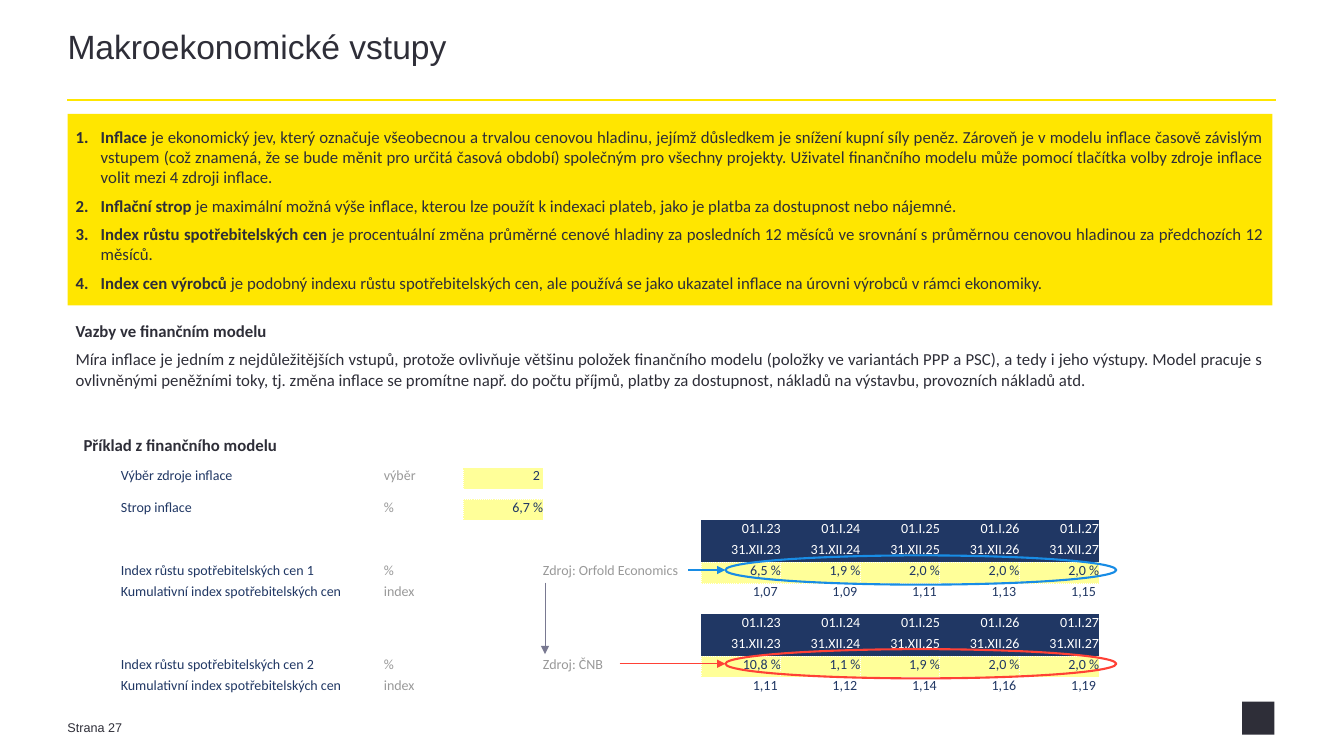
from lxml import etree
from pptx import Presentation
from pptx.dml.color import RGBColor
from pptx.enum.shapes import MSO_CONNECTOR, MSO_SHAPE
from pptx.enum.text import MSO_ANCHOR, MSO_AUTO_SIZE, PP_ALIGN
from pptx.oxml.ns import qn
from pptx.util import Inches, Pt

LEFT, RIGHT, JUST = PP_ALIGN.LEFT, PP_ALIGN.RIGHT, PP_ALIGN.JUSTIFY
TOP, MIDDLE = MSO_ANCHOR.TOP, MSO_ANCHOR.MIDDLE
FIXED = MSO_AUTO_SIZE.NONE
RECT, OVAL = MSO_SHAPE.RECTANGLE, MSO_SHAPE.OVAL
LINE = MSO_CONNECTOR.STRAIGHT
PLAIN = "{2D5ABB26-0587-4C30-8999-92F81FD0307C}"

# Content
COLORS = {"ink": "2E2E38", "brand": "FFE600", "navy": "203764", "gray": "999999",
          "input": "FFFF99", "white": "FFFFFF", "blue": "188CE5", "red": "FF4136",
          "slate": "797991"}
TITLE = "Makroekonomické vstupy"
PAGE = "Strana 27"
TERMS = [
    ("Inflace", " je ekonomický jev, který označuje všeobecnou a trvalou cenovou hladinu, "
     "jejímž důsledkem je snížení kupní síly peněz. Zároveň je v modelu inflace časově "
     "závislým vstupem (což znamená, že se bude měnit pro určitá časová období) společným "
     "pro všechny projekty. Uživatel finančního modelu může pomocí tlačítka volby zdroje "
     "inflace volit mezi 4 zdroji inflace."),
    ("Inflační strop ", "je maximální možná výše inflace, kterou lze použít k indexaci "
     "plateb, jako je platba za dostupnost nebo nájemné."),
    ("Index růstu spotřebitelských cen ", "je procentuální změna průměrné cenové hladiny za "
     "posledních 12 měsíců ve srovnání s průměrnou cenovou hladinou za předchozích 12 měsíců."),
    ("Index cen výrobců ", "je podobný indexu růstu spotřebitelských cen, ale používá se "
     "jako ukazatel inflace na úrovni výrobců v rámci ekonomiky."),
]
LINKS = [
    ("Vazby ve finančním modelu", ""),
    ("", "Míra inflace je jedním z nejdůležitějších vstupů, protože ovlivňuje většinu položek "
     "finančního modelu (položky ve variantách PPP a PSC), a tedy i jeho výstupy. Model "
     "pracuje s ovlivněnými peněžními toky, tj. změna inflace se promítne např. do počtu "
     "příjmů, platby za dostupnost, nákladů na výstavbu, provozních nákladů atd."),
]
SAMPLE = [("Příklad z finančního modelu", "")]
YEARS = range(23, 28)
STARTS = [f"01.I.{year}" for year in YEARS]
ENDS = [f"31.XII.{year}" for year in YEARS]
INDEX = "Index růstu spotřebitelských cen"
TOTAL = "Kumulativní index spotřebitelských cen"

# Rows: height, kind, label, unit, input, source, yearly values
ROWS = [
    (0.21, "pick", "Výběr zdroje inflace", "výběr", "2 ", "", []),
    (0.1, "gap", "", "", "", "", []),
    (0.21, "pick", "Strop inflace", "%", "6,7 %", "", []),
    (0.21, "head", "", "", "", "", STARTS),
    (0.21, "head", "", "", "", "", ENDS),
    (0.21, "rate", INDEX + " 1", "%", "", "Zdroj: Orfold Economics",
     ["6,5 %", "1,9 %", "2,0 %", "2,0 %", "2,0 %"]),
    (0.21, "sum", TOTAL, "index", "", "", ["1,07 ", "1,09 ", "1,11 ", "1,13 ", "1,15 "]),
    (0.09, "gap", "", "", "", "", []),
    (0.21, "head", "", "", "", "", STARTS),
    (0.21, "head", "", "", "", "", ENDS),
    (0.21, "rate", INDEX + " 2", "%", "", "Zdroj: ČNB",
     ["10,8 %", "1,1 %", "1,9 %", "2,0 %", "2,0 %"]),
    (0.19, "sum", TOTAL, "index", "", "", ["1,11 ", "1,12 ", "1,14 ", "1,16 ", "1,19 "]),
]
WIDTHS = [2.61, 0.79, 0.79, 1.57] + [0.79] * 5
RINGS = [(5.51, "blue", 6.83), (6.44, "red", 6.15)]  # top, colour, arrow start
RING_X, RING_W, RING_H = 7.2, 3.88, 0.29


def color(name):
    return RGBColor.from_string(COLORS[name])


def place(shape, left, top, width, height):
    shape.left, shape.top = Inches(left), Inches(top)
    shape.width, shape.height = Inches(width), Inches(height)


def style(para, size, tone, face="Calibri"):
    for run in para.runs:
        run.font.size, run.font.name = Pt(size), face
        run.font.color.rgb = color(tone)


def frame(shape, pad_x, pad_y, anchor=TOP):
    box = shape.text_frame
    box.word_wrap, box.auto_size, box.vertical_anchor = True, FIXED, anchor
    box.margin_left = box.margin_right = Inches(pad_x)
    box.margin_top = box.margin_bottom = Inches(pad_y)
    return box


def write(box, items, number=False):
    for i, (lead, rest) in enumerate(items):
        para = box.paragraphs[0] if i == 0 else box.add_paragraph()
        if number:
            props = para._p.get_or_add_pPr()
            props.set("marL", str(Inches(0.25)))
            props.set("indent", str(Inches(-0.25)))
            etree.SubElement(props, qn("a:buAutoNum"), type="arabicPeriod")
        para.alignment = JUST
        para.space_before, para.space_after = Pt(0), Pt(6)
        for text, bold in ((lead, True), (rest, False)):
            if text:
                run = para.add_run()
                run.text, run.font.bold = text, bold
        style(para, 12, "ink")


def label(shape, text, size):
    para = shape.text_frame.paragraphs[0]
    para.text, para.alignment, para.line_spacing = text, LEFT, 0.85
    style(para, size, "ink", "Arial")


def draw(x1, y1, x2, y2, tone, width, arrow=True):
    line = slide.shapes.add_connector(LINE, Inches(x1), Inches(y1), Inches(x2), Inches(y2))
    line.line.color.rgb, line.line.width = color(tone), Pt(width)
    if arrow:
        etree.SubElement(line.line._get_or_add_ln(), qn("a:tailEnd"), type="triangle")
    etree.SubElement(line._element.spPr, qn("a:effectLst"))


def dot(cell):
    props = cell._tc.get_or_add_tcPr()
    for side in ("lnL", "lnR", "lnT", "lnB"):
        edge = etree.SubElement(props, qn("a:" + side), w=str(Pt(0.5)))
        fill = etree.SubElement(edge, qn("a:solidFill"))
        etree.SubElement(fill, qn("a:srgbClr"), val=COLORS["white"])
        etree.SubElement(edge, qn("a:prstDash"), val="sysDot")


def fill_cell(cell, text, col, kind):
    cell.margin_left = cell.margin_right = cell.margin_top = cell.margin_bottom = 0
    back = None
    if text and (col == 2 or col > 3):
        back = {"pick": "input", "rate": "input", "head": "navy"}.get(kind)
    if back == "input":
        dot(cell)
    if back:
        cell.fill.solid()
        cell.fill.fore_color.rgb = color(back)
    else:
        cell.fill.background()
    para = cell.text_frame.paragraphs[0]
    if not text:
        etree.SubElement(para._p, qn("a:endParaRPr"), sz="100")
        return
    para.text = text
    para.alignment = RIGHT if col == 2 or col > 3 else LEFT
    style(para, 10, "white" if back == "navy" else "gray" if col in (1, 3) else "navy")


prs = Presentation()
prs.slide_width, prs.slide_height = Inches(13.34), Inches(7.5)
slide = prs.slides.add_slide(prs.slide_layouts[1])

# Title, rule, footer and corner mark
title = slide.shapes.title
place(title, 0.67, 0.32, 12.01, 0.65)
frame(title, 0, 0)
label(title, TITLE, 24)
draw(0.67, 0.99, 12.67, 0.99, "brand", 1.5, arrow=False)
page = slide.shapes.add_textbox(Inches(0.67), Inches(7.12), Inches(1), Inches(0.17))
frame(page, 0, 0.04).margin_bottom = 0
label(page, PAGE, 9)
mark = slide.shapes.add_shape(RECT, Inches(12.33), Inches(6.96), Inches(0.32), Inches(0.33))
mark.shadow.inherit = False
mark.fill.solid()
mark.fill.fore_color.rgb = color("ink")
mark.line.fill.background()

# Definitions
body = slide.placeholders[1]
place(body, 0.67, 1.13, 11.96, 1.9)
body.fill.solid()
body.fill.fore_color.rgb = color("brand")
write(frame(body, 0.08, 0.12, MIDDLE), TERMS, number=True)

# Text below the definitions
for items, left, top, height, pad in ((LINKS, 0.67, 3.06, 1.13, 0.08),
                                      (SAMPLE, 0.71, 4.19, 0.44, 0.12)):
    note = slide.shapes.add_textbox(Inches(left), Inches(top), Inches(11.96), Inches(height))
    write(frame(note, pad, 0.12), items)

# Model table
grid = slide.shapes.add_table(len(ROWS), len(WIDTHS), Inches(1.2), Inches(4.64),
                              Inches(sum(WIDTHS)), Inches(sum(row[0] for row in ROWS))).table
grid.first_row = grid.horz_banding = False
grid._tbl.tblPr.find(qn("a:tableStyleId")).text = PLAIN
for col, width in enumerate(WIDTHS):
    grid.columns[col].width = Inches(width)
for r, (height, kind, *texts, values) in enumerate(ROWS):
    grid.rows[r].height = Inches(height)
    for col, text in enumerate(texts + (values or [""] * len(YEARS))):
        fill_cell(grid.cell(r, col), text, col, kind)

# Rings and arrows
for top, tone, start in RINGS:
    ring = slide.shapes.add_shape(OVAL, Inches(RING_X), Inches(top),
                                  Inches(RING_W), Inches(RING_H))
    ring.shadow.inherit = False
    ring.fill.background()
    ring.line.color.rgb, ring.line.width = color(tone), Pt(1.5)
    mid = top + RING_H / 2
    draw(start, mid, RING_X, mid, tone, 0.75)
draw(5.41, 5.78, 5.41, 6.49, "slate", 0.75)

prs.save("out.pptx")
